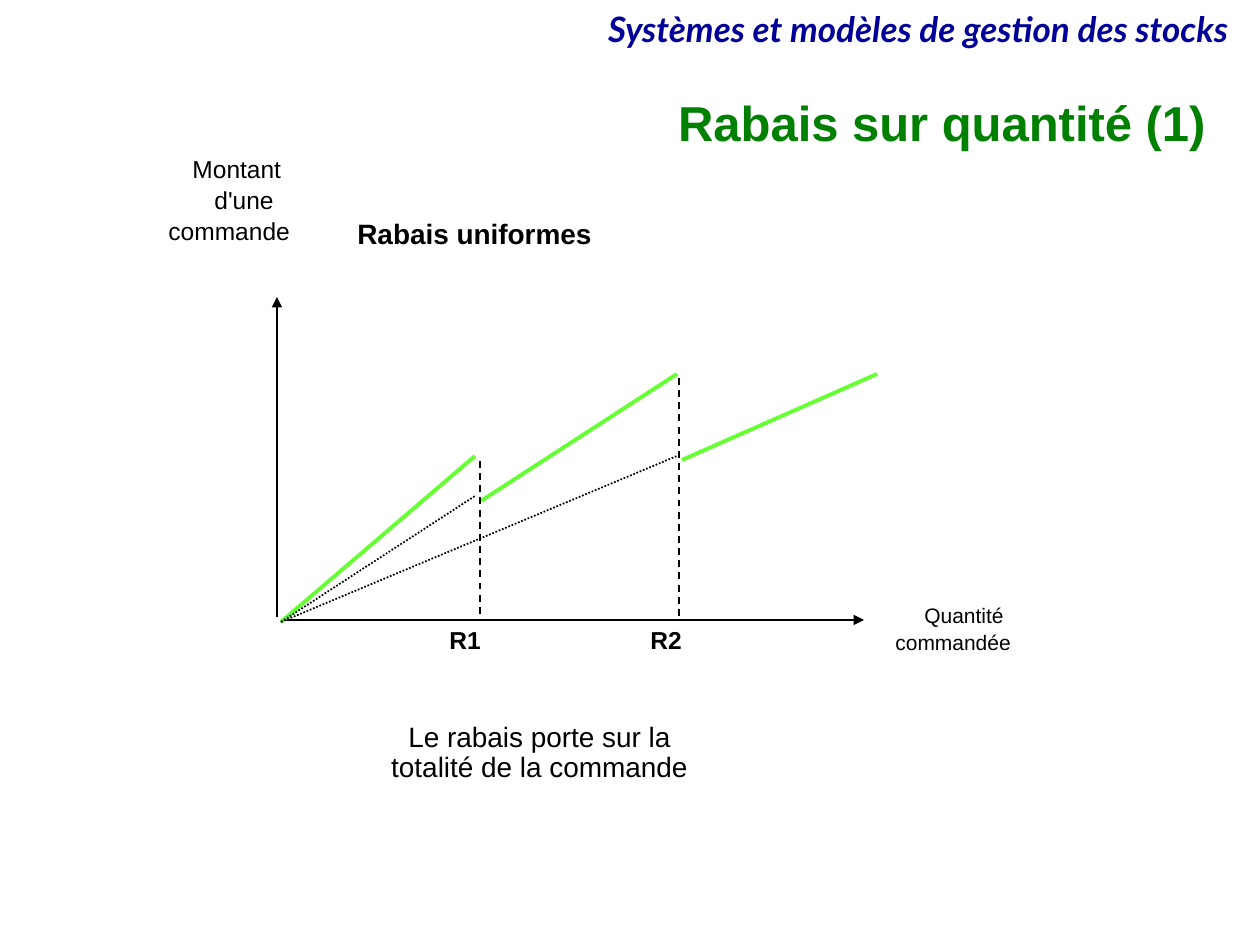
from lxml.etree import SubElement
from pptx import Presentation
from pptx.dml.color import RGBColor
from pptx.enum.dml import MSO_LINE
from pptx.enum.shapes import MSO_CONNECTOR
from pptx.enum.text import MSO_ANCHOR, PP_ALIGN
from pptx.oxml.ns import qn
from pptx.util import Pt

SCALE = 914400 / 126
BLACK, GREEN, LIME, NAVY = "000000", "008000", "66FF33", "000099"
ZERO = (281, 622)


def px(num):
    """Turn pixels into EMU."""
    return round(num * SCALE)


def color(code):
    """Turn a hex string into a colour."""
    return RGBColor.from_string(code)


def text(slide, box, lines, size, ink=BLACK, face="Arial", bold=False,
         slant=False, align=PP_ALIGN.LEFT, anchor=MSO_ANCHOR.TOP):
    """Add a text box with one paragraph per line."""
    frame = slide.shapes.add_textbox(*map(px, box)).text_frame
    frame.word_wrap = True
    frame.vertical_anchor = anchor
    for at, line in enumerate(lines):
        para = frame.add_paragraph() if at else frame.paragraphs[0]
        para.alignment = align
        para.line_spacing = 0.9
        run = para.add_run()
        run.text = line
        font = run.font
        font.name, font.size = face, Pt(size)
        font.bold, font.italic = bold, slant
        font.color.rgb = color(ink)


def line(slide, start, end, ink=BLACK, width=1, dash=None, arrow=False):
    """Add a straight line, with an arrowhead at its end if asked."""
    link = slide.shapes.add_connector(
        MSO_CONNECTOR.STRAIGHT, *map(px, start + end))
    link.line.color.rgb = color(ink)
    link.line.width = Pt(width)
    if dash:
        link.line.dash_style = dash
    if arrow:
        SubElement(link.line._get_or_add_ln(), qn("a:tailEnd"), type="triangle")
    SubElement(link._element.spPr, qn("a:effectLst"))


def graph(slide):
    """Draw the axes, the price segments and their guides."""
    line(slide, (277, 617), (277, 297), arrow=True)
    line(slide, (281, 620), (864, 620), arrow=True)
    for start, end in ((ZERO, (475, 456)), ((481, 501), (677, 374)),
                       ((682, 460), (877, 374))):
        line(slide, start, end, LIME, 2.25)
    for end in ((475, 496), (677, 456)):
        line(slide, ZERO, end, dash=MSO_LINE.ROUND_DOT)
    for left, top in ((480, 461), (679, 378)):
        line(slide, (left, top), (left, 617), dash=MSO_LINE.DASH)


def labels(slide):
    """Name the axes and the two thresholds."""
    for word, left, top, width, size in (
            ("Montant", 180, 151, 180, 14), ("d'une", 202, 182, 134, 14),
            ("commande", 156, 213, 232, 14), ("Quantité", 912, 599, 166, 12),
            ("commandée", 883, 626, 223, 12)):
        text(slide, (left, top, width, 50), [word], size)
    for word, left in (("R1", 437), ("R2", 638)):
        text(slide, (left, 622, 89, 50), [word], 14, bold=True)


def main():
    """Build and save the slide."""
    deck = Presentation()
    deck.slide_width, deck.slide_height = px(1260), px(945)
    slide = deck.slides.add_slide(deck.slide_layouts[6])
    text(slide, (451, 6, 790, 50), ["Systèmes et modèles de gestion des stocks"],
         20, NAVY, "Lato", True, True, PP_ALIGN.RIGHT)
    text(slide, (220, 94, 998, 63), ["Rabais sur quantité (1)"], 28, GREEN,
         bold=True, align=PP_ALIGN.RIGHT, anchor=MSO_ANCHOR.MIDDLE)
    graph(slide)
    labels(slide)
    text(slide, (345, 214, 417, 57), ["Rabais uniformes"], 16, bold=True)
    text(slide, (283, 717, 513, 94),
         ["Le rabais porte sur la", "totalité de la commande"], 16,
         align=PP_ALIGN.CENTER)
    deck.save("out.pptx")


if __name__ == "__main__":
    main()
